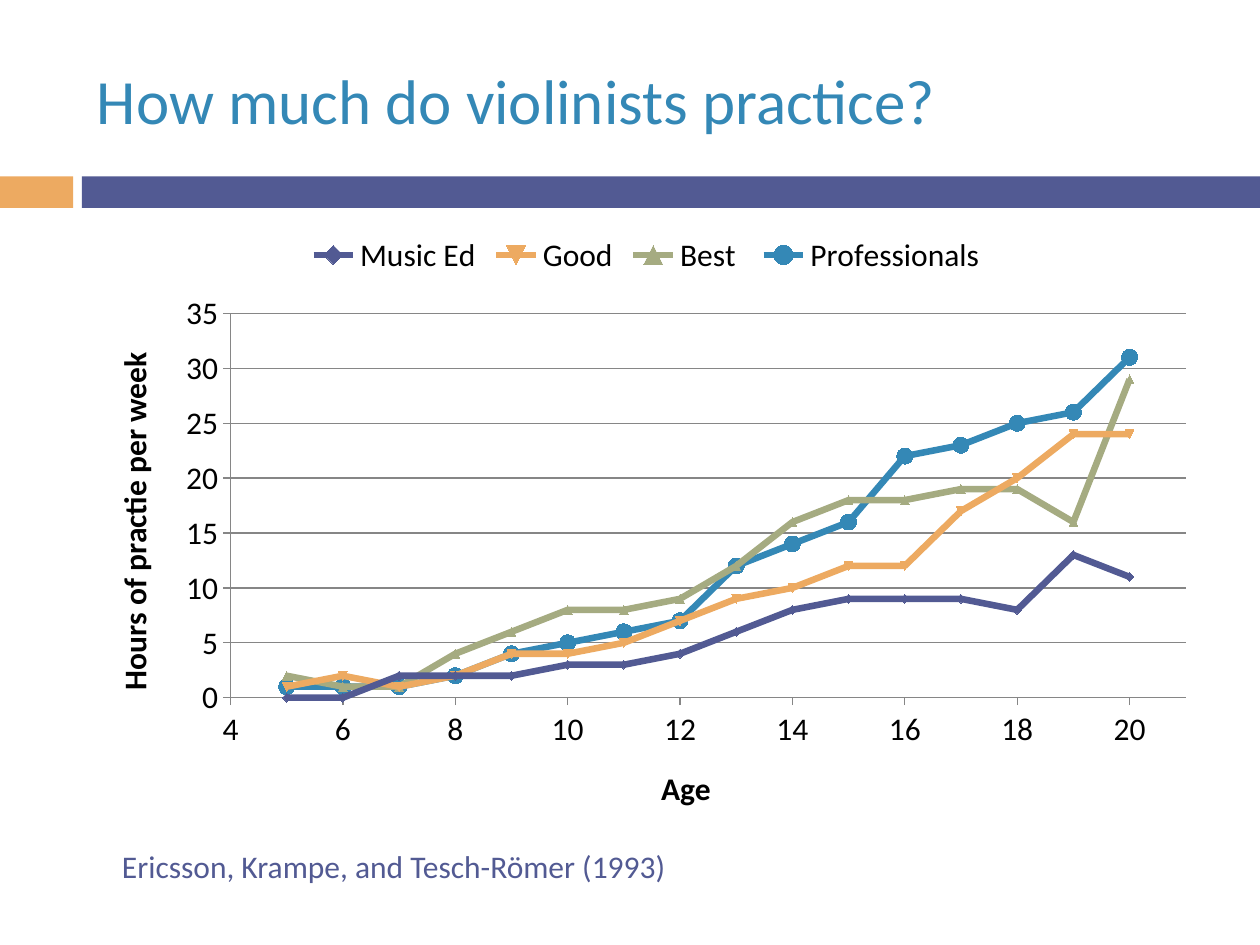
import pptx
import pptx.chart.data
import pptx.dml.color
import pptx.enum.chart
import pptx.enum.shapes
import pptx.enum.text
import pptx.oxml
import pptx.oxml.ns
import pptx.util

RGBColor = pptx.dml.color.RGBColor
INDIGO = RGBColor(0x52, 0x5A, 0x93)
ORANGE = RGBColor(0xED, 0xAA, 0x61)
SAGE = RGBColor(0xA5, 0xAB, 0x81)
BLUE = RGBColor(0x34, 0x88, 0xB6)
BLACK = RGBColor(0, 0, 0)
GRAY = RGBColor(0x86, 0x86, 0x86)

AGES = range(5, 21)
PRACTICE = [
    ("Music Ed", INDIGO, [0, 0, 2, 2, 2, 3, 3, 4, 6, 8, 9, 9, 9, 8, 13, 11]),
    ("Good", ORANGE, [1, 2, 1, 2, 4, 4, 5, 7, 9, 10, 12, 12, 17, 20, 24, 24]),
    ("Best ", SAGE, [2, 1, 1, 4, 6, 8, 8, 9, 12, 16, 18, 18, 19, 19, 16, 29]),
    ("Professionals", BLUE, [1, 1, 1, 2, 4, 5, 6, 7, 12, 14, 16, 22, 23, 25, 26, 31]),
]


class PracticeSlide:
    """Holds the style and the current page; lengths are inches on a 10 by 7.5 grid."""

    font = "Calibri"
    body_size = 18
    line_width = 3.75

    def __init__(self, deck):
        self.page = deck.slides.add_slide(deck.slide_layouts[6])

    def place(self, *lengths):
        return [pptx.util.Inches(length) for length in lengths]

    def style(self, font, size, color, bold=False):
        font.name = self.font
        font.size = pptx.util.Pt(size)
        font.bold = bold
        font.color.rgb = color

    def bar(self, left, top, width, height, color):
        box = self.page.shapes.add_shape(
            pptx.enum.shapes.MSO_SHAPE.RECTANGLE, *self.place(left, top, width, height))
        box.shadow.inherit = False
        box.fill.solid()
        box.fill.fore_color.rgb = color
        box.line.fill.background()

    def text(self, left, top, width, height, words, size, color, middle=False):
        frame = self.page.shapes.add_textbox(*self.place(left, top, width, height)).text_frame
        frame.word_wrap = True
        if middle:
            frame.vertical_anchor = pptx.enum.text.MSO_ANCHOR.MIDDLE
        span = frame.paragraphs[0].add_run()
        span.text = words
        self.style(span.font, size, color)

    def axis(self, axis, title, low, high, step):
        axis.minimum_scale, axis.maximum_scale, axis.major_unit = low, high, step
        axis.major_tick_mark = pptx.enum.chart.XL_TICK_MARK.OUTSIDE
        axis.minor_tick_mark = pptx.enum.chart.XL_TICK_MARK.NONE
        axis.format.line.color.rgb = GRAY
        axis.format.line.width = pptx.util.Pt(0.75)
        self.style(axis.tick_labels.font, self.body_size, BLACK)
        axis.tick_labels.number_format = "0"
        axis.tick_labels.number_format_is_linked = False
        span = axis.axis_title.text_frame.paragraphs[0].add_run()
        span.text = title
        self.style(span.font, self.body_size, BLACK, bold=True)

    def plot_area(self, chart, **shares):
        area = chart.plots[0]._element.getparent()
        for old in area.findall(pptx.oxml.ns.qn("c:layout")):
            area.remove(old)
        parts = "".join(f'<c:{name} val="{share}"/>' for name, share in shares.items())
        area.insert(0, pptx.oxml.parse_xml(
            f'<c:layout {pptx.oxml.ns.nsdecls("c")}><c:manualLayout>'
            '<c:layoutTarget val="inner"/><c:xMode val="edge"/><c:yMode val="edge"/>'
            f'{parts}</c:manualLayout></c:layout>'))

    def scatter(self, left, top, width, height, ages, groups):
        data = pptx.chart.data.XyChartData(number_format="0")
        for name, _, hours in groups:
            series = data.add_series(name)
            for age, value in zip(ages, hours):
                series.add_data_point(age, value)
        chart = self.page.shapes.add_chart(
            pptx.enum.chart.XL_CHART_TYPE.XY_SCATTER_LINES,
            *self.place(left, top, width, height), data).chart
        self.style(chart.font, 10, BLACK)
        chart.has_title = False
        chart.has_legend = True
        chart.legend.position = pptx.enum.chart.XL_LEGEND_POSITION.TOP
        chart.legend.include_in_layout = False
        self.style(chart.legend.font, self.body_size, BLACK)
        chart.plots[0].vary_by_categories = False
        for series, (_, color, _) in zip(chart.plots[0].series, groups):
            series.smooth = False
            series.format.line.color.rgb = color
            series.format.line.width = pptx.util.Pt(self.line_width)
            series.marker.format.fill.solid()
            series.marker.format.fill.fore_color.rgb = color
            series.marker.format.line.color.rgb = color
        series.marker.style = pptx.enum.chart.XL_MARKER_STYLE.CIRCLE
        series.marker.size = 9
        self.axis(chart.category_axis, "Age", 4, 21, 2)
        chart.category_axis.has_major_gridlines = False
        self.axis(chart.value_axis, "Hours of practie per week", 0, 35, 5)
        chart.value_axis.has_major_gridlines = True
        chart.value_axis.major_gridlines.format.line.color.rgb = GRAY
        self.plot_area(chart, x=0.13, y=0.15, w=0.85, h=0.62)


def main():
    deck = pptx.Presentation()
    deck.slide_width = pptx.util.Inches(10)
    deck.slide_height = pptx.util.Inches(7.5)
    slide = PracticeSlide(deck)
    slide.bar(0, 1.4, 0.58, 0.25, ORANGE)
    slide.bar(0.65, 1.4, 9.35, 0.25, INDIGO)
    slide.text(0.67, 0.25, 8.92, 1.08, "How much do violinists practice?", 36, BLUE, middle=True)
    slide.scatter(0.67, 1.75, 8.92, 4.92, AGES, PRACTICE)
    slide.text(0.87, 6.67, 6.03, 0.4, "Ericsson, Krampe, and Tesch-Römer (1993)", 18, INDIGO)
    deck.save("out.pptx")


if __name__ == "__main__":
    main()
